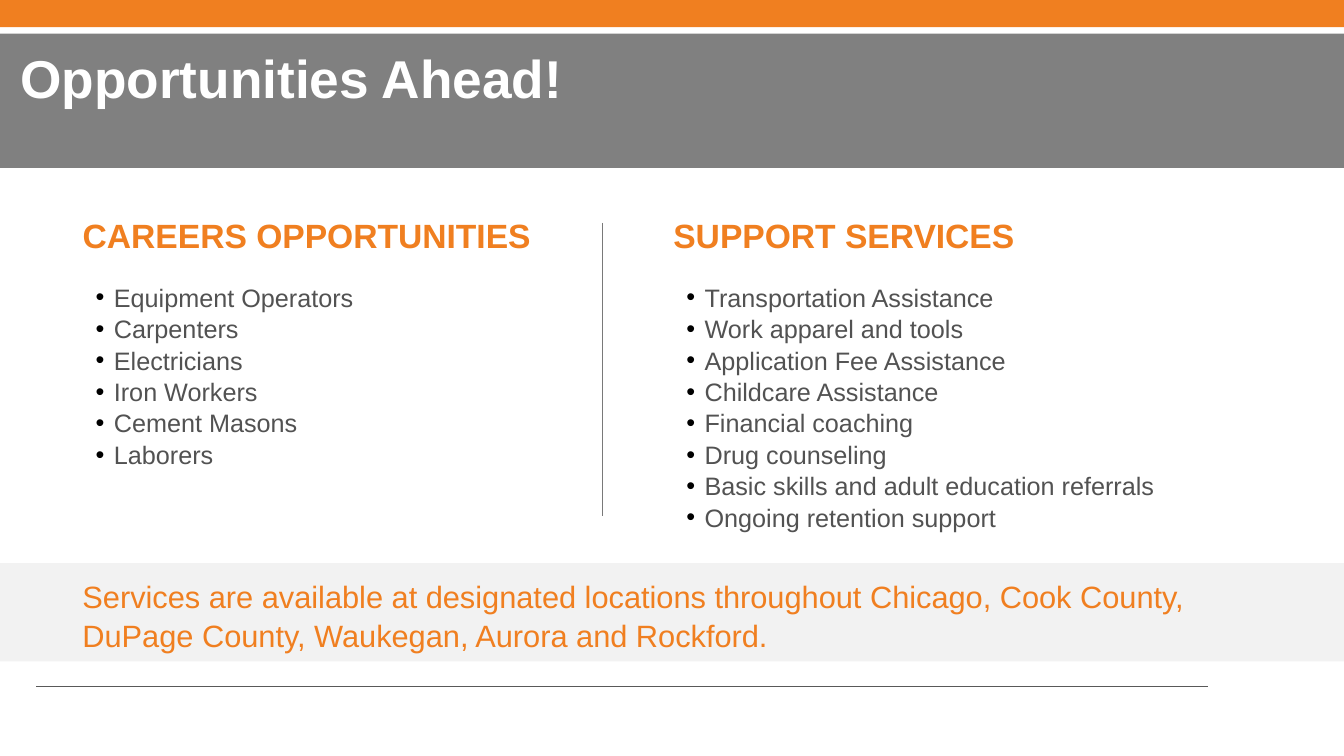
from dataclasses import dataclass
from typing import Any

from lxml.etree import SubElement
from pptx import Presentation
from pptx.dml.color import RGBColor
from pptx.enum.shapes import MSO_CONNECTOR, MSO_SHAPE
from pptx.enum.text import MSO_ANCHOR, MSO_AUTO_SIZE, PP_ALIGN
from pptx.oxml.ns import qn
from pptx.util import Inches, Pt


def color(hex_string):
    return RGBColor.from_string(hex_string)


@dataclass
class SlideBuilder:
    slide: Any
    column: float
    row: float
    font: str = "Arial"
    accent: str = "F07F20"
    body: str = "525252"
    line_spacing: float = 1.04

    def place(self, left, top, width, height):
        return (round(left * self.column), round(top * self.row),
                round(width * self.column), round(height * self.row))

    def move(self, shape, *area):
        shape.left, shape.top, shape.width, shape.height = self.place(*area)

    def band(self, top, height, fill):
        shape = self.slide.shapes.add_shape(
            MSO_SHAPE.RECTANGLE, *self.place(0, top, 100, height))
        shape.shadow.inherit = False
        shape.fill.solid()
        shape.fill.fore_color.rgb = color(fill)
        shape.line.fill.background()

    def rule(self, left, top, width, height, stroke):
        x, y, dx, dy = self.place(left, top, width, height)
        line = self.slide.shapes.add_connector(
            MSO_CONNECTOR.STRAIGHT, x, y, x + dx, y + dy)
        line.line.color.rgb = color(stroke)
        line.line.width = Pt(0.75)
        SubElement(line._element.spPr, qn("a:effectLst"))

    def frame(self, shape):
        frame = shape.text_frame
        frame.word_wrap = True
        frame.auto_size = MSO_AUTO_SIZE.NONE
        frame.vertical_anchor = MSO_ANCHOR.TOP
        return frame

    def set_text(self, paragraph, text, size, fill, bold=False):
        paragraph.text = text
        paragraph.alignment = PP_ALIGN.LEFT
        paragraph.line_spacing = self.line_spacing
        paragraph.space_before = Pt(0)
        paragraph.font.name = self.font
        paragraph.font.size = Pt(size)
        paragraph.font.bold = bold
        paragraph.font.color.rgb = color(fill)

    def bullet(self, paragraph, symbol=None):
        properties = paragraph._p.get_or_add_pPr()
        properties.set("marL", str(Inches(0.31) if symbol else 0))
        properties.set("indent", str(Inches(-0.18) if symbol else 0))
        if symbol:
            bullet_color = SubElement(properties, qn("a:buClr"))
            SubElement(bullet_color, qn("a:srgbClr"), val="000000")
            SubElement(properties, qn("a:buFont"), typeface=self.font)
            SubElement(properties, qn("a:buChar"), char=symbol)
        else:
            SubElement(properties, qn("a:buNone"))

    def title(self, text, *area):
        shape = self.slide.shapes.title
        self.move(shape, *area)
        shape.fill.solid()
        shape.fill.fore_color.rgb = color("808080")
        frame = self.frame(shape)
        frame.margin_left = frame.margin_right = Inches(0.2)
        self.set_text(frame.paragraphs[0], text, 38, "FFFFFF", True)
        frame.paragraphs[0].line_spacing = 1.1

    def topic(self, index, heading, items, *area):
        shape = self.slide.placeholders[index]
        self.move(shape, *area)
        frame = self.frame(shape)
        first = frame.paragraphs[0]
        self.bullet(first)
        self.set_text(first, heading, 24, self.accent, True)
        first.space_after = Pt(18)
        for item in items:
            paragraph = frame.add_paragraph()
            self.bullet(paragraph, "•")
            self.set_text(paragraph, item, 18, self.body)

    def note(self, text, *area):
        shape = self.slide.shapes.add_textbox(*self.place(*area))
        self.set_text(self.frame(shape).paragraphs[0], text, 22, self.accent)


def main():
    presentation = Presentation()
    presentation.slide_width = Inches(13.33)
    presentation.slide_height = Inches(7.5)
    slide = presentation.slides.add_slide(presentation.slide_layouts[3])
    builder = SlideBuilder(slide, presentation.slide_width / 100,
                           presentation.slide_height / 100)

    builder.band(0, 3.6, builder.accent)
    builder.rule(2.7, 90.8, 87.15, 0, "595959")
    builder.band(74.5, 13, "F2F2F2")
    builder.title("Opportunities Ahead!", 0, 4.45, 100, 17.75)
    builder.topic(1, "CAREERS OPPORTUNITIES", [
        "Equipment Operators", "Carpenters", "Electricians",
        "Iron Workers", "Cement Masons", "Laborers",
    ], 5.4, 27.6, 39.15, 34.1)
    builder.topic(2, "SUPPORT SERVICES", [
        "Transportation Assistance", "Work apparel and tools",
        "Application Fee Assistance", "Childcare Assistance",
        "Financial coaching", "Drug counseling",
        "Basic skills and adult education referrals",
        "Ongoing retention support",
    ], 49.35, 27.6, 41.55, 42.1)
    builder.note("Services are available at designated locations throughout "
                 "Chicago, Cook County, DuPage County, Waukegan, Aurora and "
                 "Rockford.", 5.4, 75.6, 89.1, 11.2)
    builder.rule(44.85, 29.5, 0, 38.8, "797979")
    presentation.save("out.pptx")


if __name__ == "__main__":
    main()
